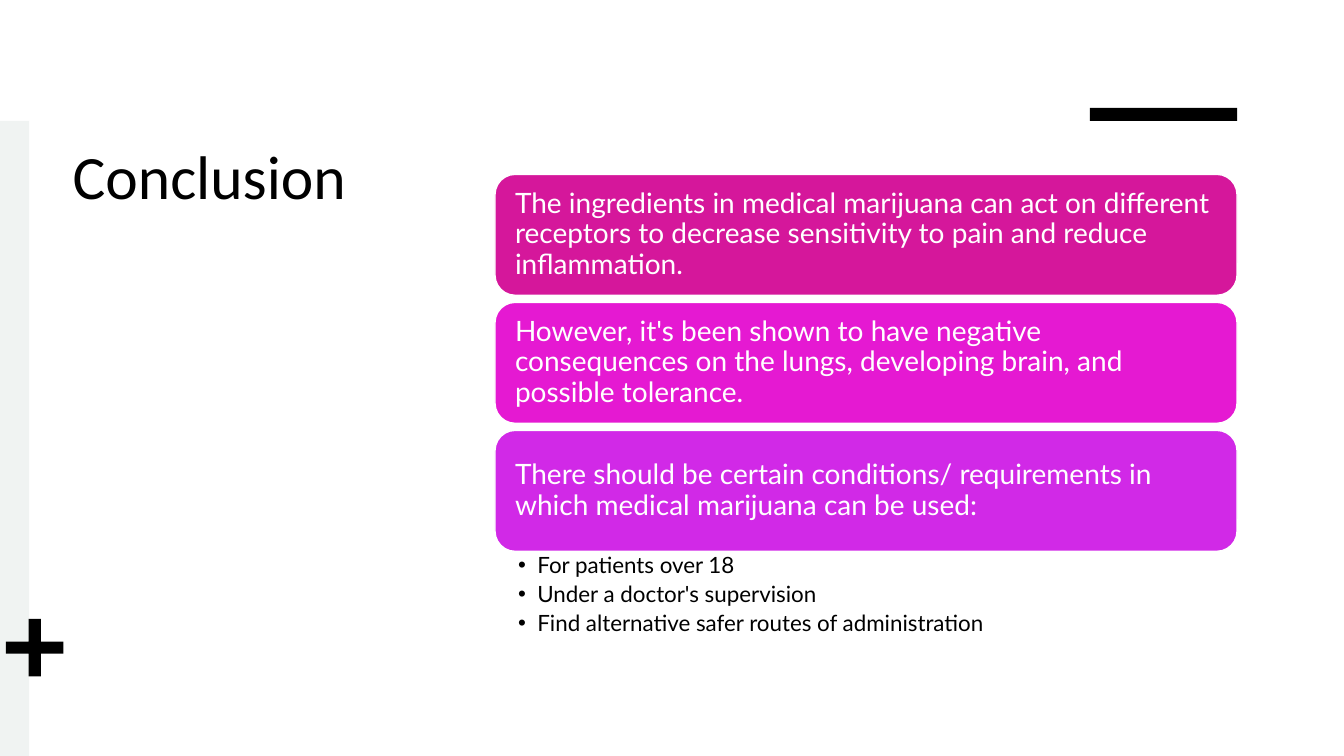
from pptx import Presentation
from pptx.dml.color import RGBColor
from pptx.enum.shapes import MSO_SHAPE
from pptx.enum.text import MSO_ANCHOR, MSO_AUTO_SIZE, PP_ALIGN
from pptx.util import Pt

THEME = {
    "ink": RGBColor(0x00, 0x00, 0x00),
    "paper": RGBColor(0xFF, 0xFF, 0xFF),
    "band": RGBColor(0xF0, 0xF3, 0xF2),
    "cards": [
        RGBColor(0xD5, 0x17, 0x9B),
        RGBColor(0xE5, 0x19, 0xD2),
        RGBColor(0xD1, 0x29, 0xE7),
    ],
    "title_font": "Calibri",
    "body_font": "Lato",
    "title_size": Pt(44),
    "card_size": Pt(20),
    "list_size": Pt(16),
}
PX = 9144

CARD_LEFT, CARD_TOP, CARD_WIDTH, CARD_HEIGHT, CARD_PITCH = 491, 173, 736, 120, 127
CARD_TEXTS = [
    "The ingredients in medical marijuana can act on different receptors to decrease sensitivity to pain and reduce inflammation.",
    "However, it's been shown to have negative consequences on the lungs, developing brain, and possible tolerance.",
    "There should be certain conditions/ requirements in which medical marijuana can be used:",
]
CONDITIONS = [
    "For patients over 18",
    "Under a doctor's supervision",
    "Find alternative safer routes of administration",
]


def add_filled(page, kind, bounds, color):
    shape = page.shapes.add_shape(kind, *[length * PX for length in bounds])
    shape.shadow.inherit = False
    shape.fill.solid()
    shape.fill.fore_color.rgb = color
    shape.line.fill.background()
    return shape


def set_text(box, texts, font, size, color, insets, anchor):
    frame = box.text_frame
    frame.text = "\n".join(texts)
    frame.word_wrap = True
    frame.auto_size = MSO_AUTO_SIZE.NONE
    frame.vertical_anchor = anchor
    frame.margin_left, frame.margin_top, frame.margin_right, frame.margin_bottom = [
        inset * PX for inset in insets
    ]
    for para in frame.paragraphs:
        para.alignment = PP_ALIGN.LEFT
        para.font.name = font
        para.font.size = size
        para.font.color.rgb = color
    return frame.paragraphs


deck = Presentation()
deck.slide_width, deck.slide_height = 1333 * PX, 750 * PX
page = deck.slides.add_slide(deck.slide_layouts[1])

title, conditions = page.placeholders[0], page.placeholders[1]
for box, bounds in [
    (title, (62, 132, 350, 475)),
    (conditions, (CARD_LEFT, 547, CARD_WIDTH, 88)),
]:
    box.left, box.top, box.width, box.height = [length * PX for length in bounds]

set_text(title, ["Conclusion"], THEME["title_font"], THEME["title_size"],
         THEME["ink"], (10, 5, 10, 5), MSO_ANCHOR.TOP)

add_filled(page, MSO_SHAPE.RECTANGLE, (1081, 107, 146, 13), THEME["ink"])
add_filled(page, MSO_SHAPE.RECTANGLE, (0, 120, 29, 630), THEME["band"])
plus = add_filled(page, MSO_SHAPE.CROSS, (6, 614, 57, 57), THEME["ink"])
plus.adjustments[0] = 0.395

for index, (text, color) in enumerate(zip(CARD_TEXTS, THEME["cards"])):
    top = CARD_TOP + index * CARD_PITCH
    card = add_filled(page, MSO_SHAPE.ROUNDED_RECTANGLE,
                      (CARD_LEFT, top, CARD_WIDTH, CARD_HEIGHT), color)
    card.line.color.rgb = THEME["paper"]
    card.line.width = Pt(1)
    for para in set_text(card, [text], THEME["body_font"], THEME["card_size"],
                         THEME["paper"], (14, 14, 14, 14), MSO_ANCHOR.MIDDLE):
        para.line_spacing = 0.9

for para in set_text(conditions, CONDITIONS, THEME["body_font"], THEME["list_size"],
                     THEME["ink"], (23, 3, 16, 3), MSO_ANCHOR.TOP):
    para.line_spacing = 0.9
    para.space_before = Pt(0)
    para.space_after = Pt(3.2)
    properties = para._p.get_or_add_pPr()
    properties.set("marL", str(19 * PX))
    properties.set("indent", str(-19 * PX))

deck.save("out.pptx")
